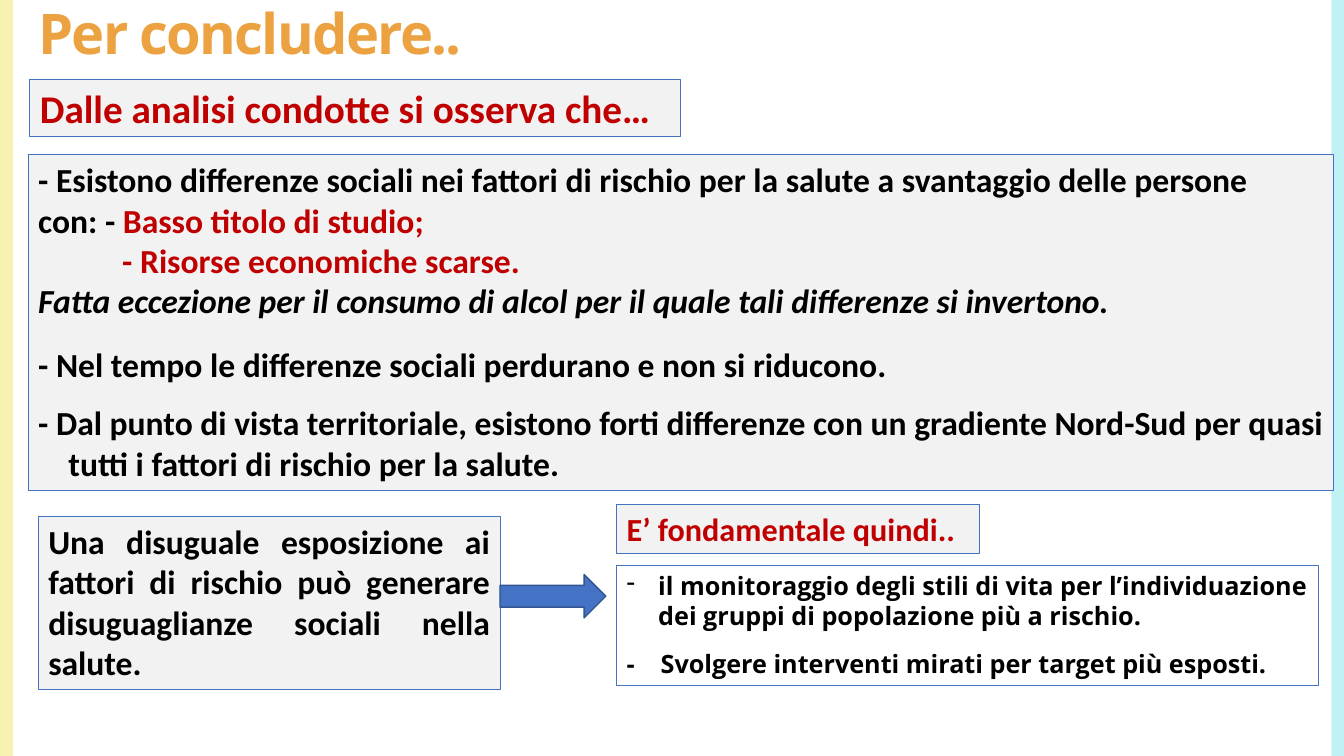
from pptx import Presentation
from pptx.dml.color import RGBColor
from pptx.enum.shapes import MSO_SHAPE as SHAPE
from pptx.enum.text import MSO_ANCHOR as ANCHOR, PP_ALIGN as ALIGN
from pptx.util import Pt
from lxml import etree

C = {"yellow": "F7F2B1", "aqua": "C0F1F4", "title": "EDA242", "grey": "F2F2F2",
     "blue": "4472C4", "edge": "325491", "red": "C00000", "black": "000000"}
NS = "{http://schemas.openxmlformats.org/drawingml/2006/main}"
BREAK = "\n"

prs = Presentation()
prs.slide_width, prs.slide_height = Pt(960), Pt(540)
s = prs.slides.add_slide(prs.slide_layouts[6])


def add_box(x, y, w, h, fill=None, line=None, weight=0.75, kind=SHAPE.RECTANGLE):
    sp = s.shapes.add_shape(kind, Pt(x), Pt(y), Pt(w), Pt(h))
    sp.shadow.inherit = False
    for color, part in ((fill, sp.fill), (line, sp.line.fill)):
        if color:
            part.solid()
            part.fore_color.rgb = RGBColor.from_string(C[color])
        else:
            part.background()
    if line:
        sp.line.width = Pt(weight)
    sp.text_frame.word_wrap = True
    sp.text_frame.vertical_anchor = ANCHOR.TOP
    return sp.text_frame


def add_text(tf, *runs, size=24, font="Calibri", color="black", italic=False,
             align=ALIGN.LEFT, before=0, left=0, hang=0, bullet=None):
    """Add a paragraph; a run is a text, a (text, color) pair or BREAK."""
    p = tf.paragraphs[0]
    if p.runs:
        p = tf.add_paragraph()
    p.alignment, p.space_before = align, Pt(before)
    pPr = p._p.get_or_add_pPr()
    pPr.set("marL", str(Pt(left)))
    pPr.set("indent", str(-Pt(hang)))
    if bullet:
        etree.SubElement(pPr, NS + "buChar", char=bullet)
    for run in runs:
        if run == BREAK:
            p.add_line_break()
            continue
        text, shade = (run, color) if isinstance(run, str) else run
        r = p.add_run()
        r.text = text
        r.font.name, r.font.size = font, Pt(size)
        r.font.bold, r.font.italic = True, italic
        r.font.color.rgb = RGBColor.from_string(C[shade])
    return p


# Side strips
for x, color in ((0, "yellow"), (951, "aqua")):
    add_box(x, 0, 9.36, 540, color)

# Title
title = s.shapes.add_textbox(Pt(20.2), Pt(-10.1), Pt(808.6), Pt(72)).text_frame
title.word_wrap, title.vertical_anchor = True, ANCHOR.MIDDLE
p = add_text(title, "Per concludere..", size=40, font="Open Sans", color="title")
p.line_spacing = 0.9
p.runs[0].font._element.set("spc", "-120")

# Findings
tf = add_box(20.2, 110.2, 932.4, 240.5, "grey", "blue")
add_text(tf, "- Esistono differenze sociali nei fattori di rischio per la salute "
         "a svantaggio delle persone", BREAK, "con: - ",
         ("Basso titolo di studio;", "red"))
add_text(tf, "- Risorse economiche scarse.", color="red", left=60)
add_text(tf, "Fatta eccezione per il consumo di alcol per il quale tali differenze "
         "si invertono.", italic=True)
add_text(tf, "- Nel tempo le differenze sociali perdurano e non si riducono.",
         align=ALIGN.JUSTIFY, before=17)
# A no-break space keeps "quasi tutti" together on the second line
add_text(tf, "- Dal punto di vista territoriale, esistono forti differenze con un "
         "gradiente Nord-Sud per quasi tutti i fattori di rischio per la salute.",
         align=ALIGN.JUSTIFY, before=12.5, left=21.6, hang=21.6)

# Consequence
tf = add_box(27.4, 368.6, 329.8, 123.8, "grey", "blue")
add_text(tf, "Una disuguale esposizione ai fattori di rischio può generare "
         "disuguaglianze sociali nella salute.", align=ALIGN.JUSTIFY)

# Headings
for x, y, w, h, text, size in (
        (440.6, 360.4, 259.2, 35.3, "E’ fondamentale quindi..", 23),
        (21.4, 56.9, 464.4, 41, "Dalle analisi condotte si osserva che…", 28)):
    add_text(add_box(x, y, w, h, "grey", "blue"), text, size=size, color="red")

# Actions
tf = add_box(440.6, 403.9, 501.1, 85.7, line="blue")
add_text(tf, "il monitoraggio degli stili di vita per l’individuazione dei gruppi "
         "di popolazione più a rischio.", size=18, font="Open Sans",
         left=22.5, hang=22.5, bullet="-")
add_text(tf, "-\tSvolgere interventi mirati per target più esposti.", size=18,
         font="Open Sans", before=12.5, left=24.3, hang=24.3)

# Arrow from consequence to actions
add_box(357.1, 410.4, 75.6, 31, "blue", "edge", 1, SHAPE.RIGHT_ARROW)

prs.save("out.pptx")
